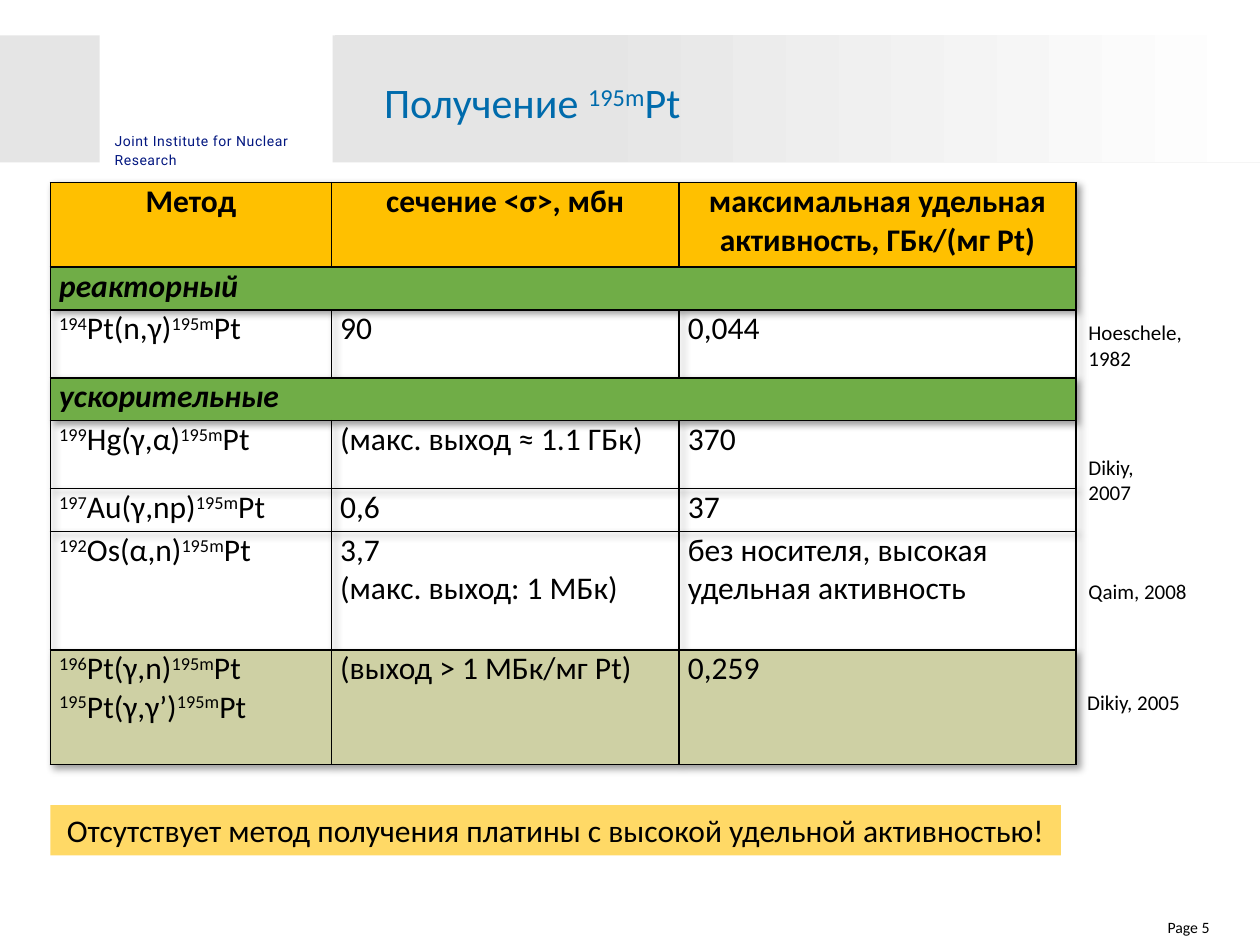
from dataclasses import dataclass
from lxml.etree import SubElement
from pptx import Presentation
from pptx.dml.color import RGBColor
from pptx.enum.shapes import MSO_SHAPE
from pptx.enum.text import MSO_ANCHOR, MSO_AUTO_SIZE, PP_ALIGN
from pptx.oxml import parse_xml
from pptx.oxml.ns import nsdecls, qn
from pptx.util import Inches, Pt


@dataclass(frozen=True)
class Theme:
    font: str = "Calibri"
    brand: str = "Roboto"
    ink: str = "000000"
    navy: str = "031780"
    blue: str = "006BAC"
    gray: str = "E5E5E5"
    white: str = "FFFFFF"
    gold: str = "FFC000"
    green: str = "70AD47"
    olive: str = "CED0A4"
    sand: str = "FFD966"
    title: int = 24
    body: int = 18
    note: int = 12
    page: int = 9
    small: int = 8


T = Theme()
COLS = [2.23, 2.76, 3.15]
HEAD = ["Метод", "сечение <σ>, мбн", "максимальная удельная активность, ГБк/(мг Pt)"]
ROWS = [
    (0.67, T.gold, HEAD),
    (0.34, T.green, ["реакторный"]),
    (0.54, None, ["^194^Pt(n,γ)^195m^Pt", "90", "0,044"]),
    (0.34, T.green, ["ускорительные"]),
    (0.54, None, ["^199^Hg(γ,α)^195m^Pt", "(макс. выход ≈ 1.1 ГБк)", "370"]),
    (0.34, None, ["^197^Au(γ,np)^195m^Pt", "0,6", "37"]),
    (0.6, None, ["^192^Os(α,n)^195m^Pt", "3,7\n(макс. выход: 1 МБк)",
                 "без носителя, высокая удельная активность"]),
    (0.34, None, [""]),
    (0.91, T.olive, ["^196^Pt(γ,n)^195m^Pt\n^195^Pt(γ,γ’)^195m^Pt",
                     "(выход > 1 МБк/мг Pt)", "0,259"]),
]
OPEN = {(6, 0): "lnB", (7, 0): "lnT"}
NOTES = [
    (0.01, 0, 0.96, 0.5, "Hoeschele,\n1982"),
    (0.01, 1.07, 0.57, 0.5, "Dikiy,\n2007"),
    (0, 2.93, 0.95, 0.3, "Dikiy, 2005"),
    (0.01, 2.05, 0.99, 0.3, "Qaim, 2008"),
]


def write(frame, text, size, color=T.ink, face=T.font, align=None, bold=False, slant=False):
    frame.text = text.replace("^", "")
    for para, line in zip(frame.paragraphs, text.split("\n")):
        para.alignment = align
        para.font.size = Pt(size)
        if "^" in line:
            para.text = ""
            for spot, part in enumerate(line.split("^")):
                if part:
                    run = para.add_run()
                    run.text = part
                    if spot % 2:
                        run.font._element.set("baseline", "30000")
        for run in para.runs:
            font = run.font
            font.name, font.size = face, Pt(size)
            font.bold, font.italic = bold, slant
            font.color.rgb = RGBColor.from_string(color)


def add_text(slide, box, text, size, wrap=True, inset=None, **look):
    frame = slide.shapes.add_textbox(*map(Inches, box)).text_frame
    frame.word_wrap = wrap
    if inset is not None:
        frame.margin_left = frame.margin_right = Inches(inset)
        frame.margin_top = frame.margin_bottom = Inches(inset)
    write(frame, text, size, **look)
    return frame


def add_rect(slide, box, color):
    rect = slide.shapes.add_shape(MSO_SHAPE.RECTANGLE, *map(Inches, box))
    rect.shadow.inherit = False
    rect.line.fill.background()
    rect.fill.solid()
    rect.fill.fore_color.rgb = RGBColor.from_string(color)
    return rect


def add_header(slide, x, y, w, h):
    add_rect(slide, (x, y, 0.79, h), T.gray)
    add_rect(slide, (x + 2.64, y, w - 2.64, h), T.gray)
    brand = add_text(slide, (x + 0.91, y + 0.76, 1.7, 0.3),
                     "Joint Institute for Nuclear\nResearch", T.small,
                     inset=0, color=T.navy, face=T.brand)
    for para in brand.paragraphs:
        para.line_spacing = 1.1
        for run in para.runs:
            run.font._element.set("spc", "30")
    fade = add_rect(slide, (x + 2.66, y, w - 2.66, h), T.gray).fill
    fade.gradient()
    fade.gradient_angle = 180
    for stop, place, color in zip(fade.gradient_stops, (0, 0.74), (T.white, T.gray)):
        stop.position = place
        stop.color.rgb = RGBColor.from_string(color)
    title = add_text(slide, (x + 2.95, y + 0.25, 6.66, 0.56),
                     "Получение ^195m^Pt", T.title, color=T.blue)
    title.vertical_anchor = MSO_ANCHOR.MIDDLE


def add_edges(cell, gap):
    props = cell._tc.get_or_add_tcPr()
    for spot, side in enumerate(("lnL", "lnR", "lnT", "lnB")):
        edge = parse_xml(f'<a:{side} {nsdecls("a")} w="12700"/>')
        if side == gap:
            SubElement(edge, qn("a:noFill"))
        else:
            fill = SubElement(edge, qn("a:solidFill"))
            SubElement(fill, qn("a:srgbClr"), val=T.ink)
        props.insert(spot, edge)


def add_grid(slide, x, y, w, h):
    frame = slide.shapes.add_table(len(ROWS), len(COLS), *map(Inches, (x, y, w, h)))
    table = frame.table
    table.first_row = table.horz_banding = False
    table._tbl.tblPr.insert(0, parse_xml(
        f'<a:effectLst {nsdecls("a")}>'
        '<a:outerShdw blurRad="50800" dist="38100" dir="2700000" algn="tl" rotWithShape="0">'
        '<a:prstClr val="black"><a:alpha val="40000"/></a:prstClr>'
        '</a:outerShdw></a:effectLst>'))
    for col, width in zip(table.columns, COLS):
        col.width = Inches(width)
    for r, (tall, color, texts) in enumerate(ROWS):
        table.rows[r].height = Inches(tall)
        band = color == T.green
        for c in range(len(COLS)):
            cell = table.cell(r, c)
            cell.margin_left = cell.margin_right = Inches(0.07)
            cell.margin_top = cell.margin_bottom = 0
            write(cell.text_frame, texts[c] if c < len(texts) else "", T.body,
                  align=PP_ALIGN.CENTER if r == 0 else None,
                  bold=band or r == 0, slant=band)
            if color:
                cell.fill.solid()
                cell.fill.fore_color.rgb = RGBColor.from_string(color)
            else:
                cell.fill.background()
            add_edges(cell, OPEN.get((r, c)))
        if band:
            table.cell(r, 0).merge(table.cell(r, 2))
    for c in (1, 2):
        table.cell(6, c).merge(table.cell(7, c))


def add_notes(slide, x, y):
    for left, top, w, h, text in NOTES:
        frame = add_text(slide, (x + left, y + top, w, h), text, T.note, wrap=False)
        frame.auto_size = MSO_AUTO_SIZE.SHAPE_TO_FIT_TEXT


def add_banner(slide, *box):
    frame = add_rect(slide, box, T.sand).text_frame
    frame.word_wrap = True
    frame.auto_size = MSO_AUTO_SIZE.SHAPE_TO_FIT_TEXT
    write(frame, "Отсутствует метод получения платины с высокой удельной активностью!",
          T.body, align=PP_ALIGN.CENTER)


def main():
    deck = Presentation()
    deck.slide_width, deck.slide_height = Inches(10), Inches(7.5)
    slide = deck.slides.add_slide(deck.slide_layouts[6])
    add_header(slide, 0, 0.28, 10, 1.01)
    add_text(slide, (8.97, 7.28, 0.63, 0.22), "Page 5", T.page,
             inset=0, align=PP_ALIGN.RIGHT)
    add_grid(slide, 0.4, 1.45, 8.14, 4.62)
    add_banner(slide, 0.4, 6.39, 8.02, 0.4)
    add_notes(slide, 8.53, 2.49)
    deck.save("out.pptx")


if __name__ == "__main__":
    main()
